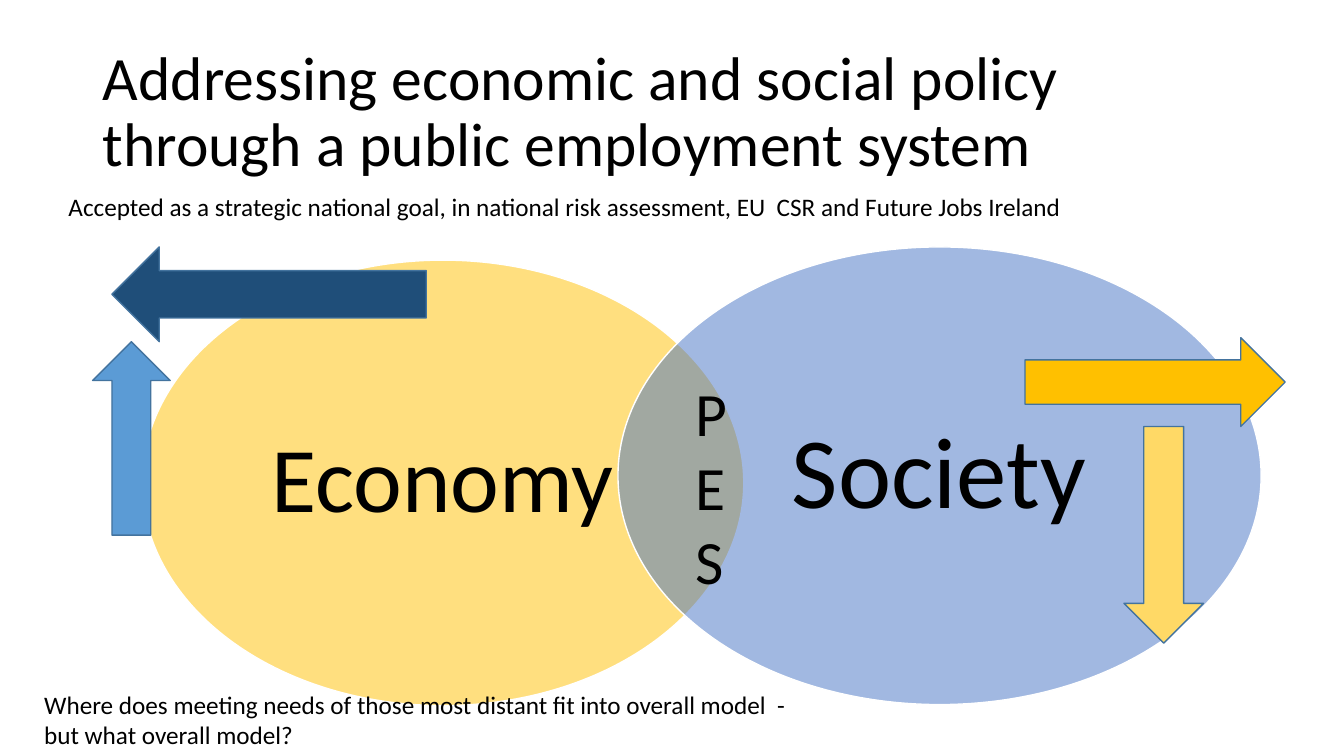
from dataclasses import dataclass

from lxml.etree import SubElement
from pptx import Presentation
from pptx.dml.color import RGBColor
from pptx.enum.shapes import MSO_SHAPE
from pptx.enum.text import MSO_ANCHOR, MSO_AUTO_SIZE, PP_ALIGN
from pptx.oxml.ns import qn
from pptx.slide import Slide
from pptx.text.text import TextFrame
from pptx.util import Pt

BLACK = RGBColor(0x00, 0x00, 0x00)
WHITE = RGBColor(0xFF, 0xFF, 0xFF)
GOLD = RGBColor(0xFF, 0xC0, 0x00)
SAND = RGBColor(0xFF, 0xD9, 0x66)
BLUE = RGBColor(0x44, 0x72, 0xC4)
SKY = RGBColor(0x5B, 0x9B, 0xD5)
NAVY = RGBColor(0x1F, 0x4E, 0x79)
STEEL = RGBColor(0x43, 0x73, 0x9E)
FONT = "Calibri"

Box = tuple[float, float, float, float]


@dataclass(frozen=True)
class Figure:
    kind: MSO_SHAPE
    box: Box
    fill: RGBColor
    line: RGBColor = STEEL
    alpha: int = 100


@dataclass(frozen=True)
class Label:
    lines: tuple[str, ...]
    box: Box
    size: float
    inset: float = 0
    centred: bool = False


TITLE = Label(
    ("Addressing economic and social policy through a public employment system",),
    (66.2, 28.8, 828, 104.4), 44)

ITEMS: tuple[Figure | Label, ...] = (
    Figure(MSO_SHAPE.OVAL, (101.5, 185.8, 429.8, 318.2), GOLD, WHITE, 50),
    Label(("Economy",), (164.2, 232.6, 303.8, 224.6), 66, 20.2, True),
    Figure(MSO_SHAPE.OVAL, (441.4, 176.4, 459.4, 326.9), BLUE, WHITE, 50),
    Label(("Society",), (508.3, 224.6, 324.7, 231.1), 72, 21.6, True),
    Label(("P", "E", "S"), (489.6, 264.2, 55.4, 167), 44),
    Label(("Where does meeting needs of those most distant fit into overall "
           "model  - but what overall model?",), (24.5, 488.9, 559.4, 51.1), 18),
    Label(("Accepted as a strategic national goal, in national risk assessment, "
           "EU  CSR and Future Jobs Ireland",), (41.8, 133.2, 733, 28.8), 18),
    Figure(MSO_SHAPE.UP_ARROW, (66.2, 244.1, 55.4, 138.2), SKY),
    Figure(MSO_SHAPE.RIGHT_ARROW, (732.2, 241.2, 185.8, 63.4), GOLD),
    Figure(MSO_SHAPE.DOWN_ARROW, (802.8, 304.6, 56.9, 154.8), SAND),
    Figure(MSO_SHAPE.LEFT_ARROW, (79.9, 176.4, 224.6, 67.7), NAVY),
)


def write(frame: TextFrame, label: Label, spacing: float) -> None:
    frame.word_wrap = True
    for i, line in enumerate(label.lines):
        para = frame.paragraphs[0] if i == 0 else frame.add_paragraph()
        para.alignment = PP_ALIGN.CENTER if label.centred else PP_ALIGN.LEFT
        para.line_spacing = spacing
        run = para.add_run()
        run.text = line
        run.font.name = FONT
        run.font.size = Pt(label.size)
        run.font.color.rgb = BLACK


def add_title(slide: Slide) -> None:
    title = slide.shapes.title
    title.left, title.top, title.width, title.height = map(Pt, TITLE.box)
    frame = title.text_frame
    frame.auto_size = MSO_AUTO_SIZE.NONE
    frame.vertical_anchor = MSO_ANCHOR.MIDDLE
    write(frame, TITLE, 0.9)


def add_label(slide: Slide, label: Label) -> None:
    frame = slide.shapes.add_textbox(*map(Pt, label.box)).text_frame
    if label.centred:
        frame.vertical_anchor = MSO_ANCHOR.MIDDLE
        frame.margin_left = frame.margin_right = Pt(label.inset)
        frame.margin_top = frame.margin_bottom = Pt(label.inset)
    else:
        frame.auto_size = MSO_AUTO_SIZE.SHAPE_TO_FIT_TEXT
    write(frame, label, 0.9 if label.centred else 1.0)


def add_figure(slide: Slide, figure: Figure) -> None:
    shape = slide.shapes.add_shape(figure.kind, *map(Pt, figure.box))
    shape.shadow.inherit = False
    shape.fill.solid()
    shape.fill.fore_color.rgb = figure.fill
    shape.line.color.rgb = figure.line
    shape.line.width = Pt(1)
    if figure.alpha < 100:
        color = shape.fill._xPr.find(qn("a:solidFill"))[0]
        SubElement(color, qn("a:alpha"), val=str(figure.alpha * 1000))


def main() -> None:
    deck = Presentation()
    deck.slide_width, deck.slide_height = Pt(960), Pt(540)
    slide = deck.slides.add_slide(deck.slide_layouts.get_by_name("Title Only"))
    add_title(slide)
    for item in ITEMS:
        if isinstance(item, Figure):
            add_figure(slide, item)
        else:
            add_label(slide, item)
    deck.save("out.pptx")


if __name__ == "__main__":
    main()
